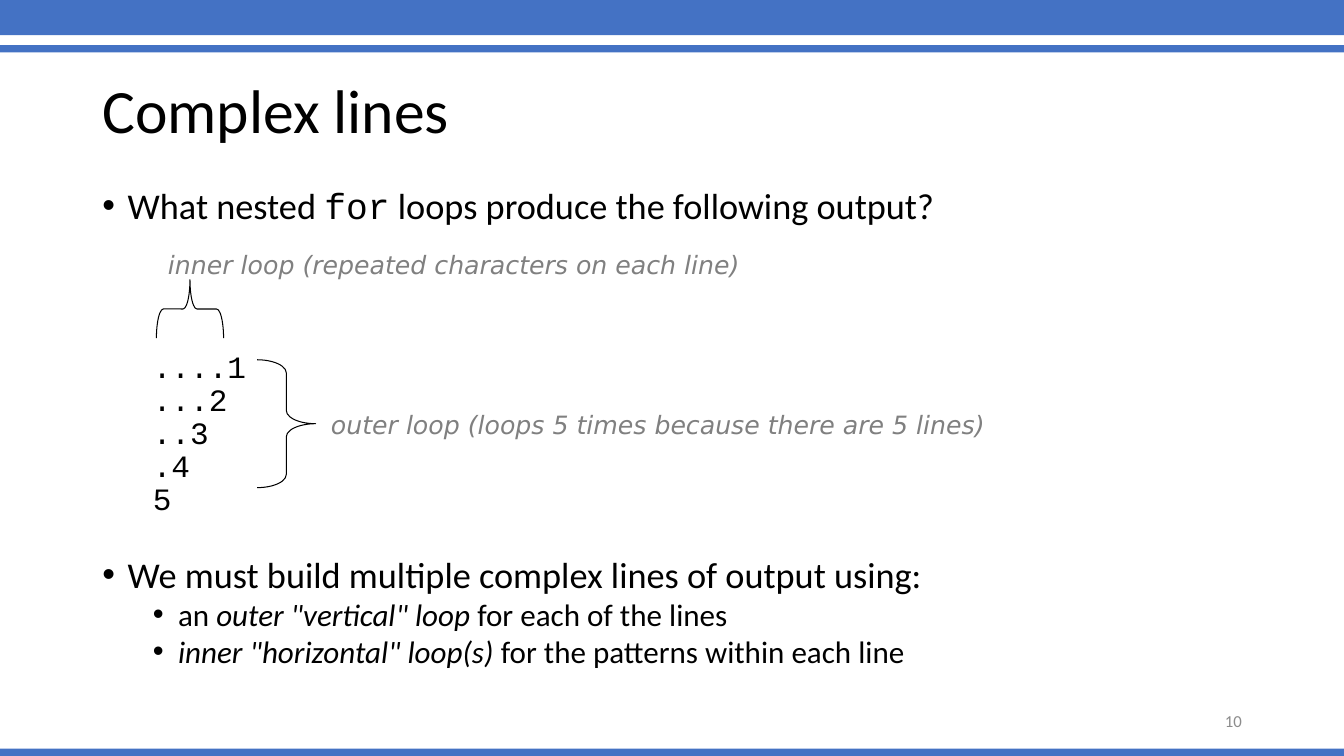
from lxml.etree import SubElement
from pptx import Presentation
from pptx.dml.color import RGBColor
from pptx.enum.shapes import MSO_SHAPE
from pptx.enum.text import MSO_ANCHOR, MSO_AUTO_SIZE, PP_ALIGN
from pptx.oxml.ns import qn
from pptx.util import Pt

SLIDE_WIDTH, SLIDE_HEIGHT = 960, 540
BLUE, BLACK, GRAY, PALE = "4472C4", "000000", "808080", "8C8C8C"
SANS, MONO, LABEL = "Calibri", "Courier New", "DejaVu Sans"

TITLE = "Complex lines"
QUESTION = [("What nested ", ""), ("for", "mono"), (" loops produce the following output?", "")]
OUTPUT = ["....1", "...2", "..3", ".4", "5"]
ANSWER = [("We must build multiple complex lines of output using:", "")]
LOOPS = [
    [("an ", ""), ('outer "vertical" loop', "italic"), (" for each of the lines", "")],
    [('inner "horizontal" loop(s)', "italic"), (" for the patterns within each line", "")],
]
BARS = [(0, 25.2), (32.2, 5.2), (534.8, 5.2)]
BRACES = [
    (183.6, 257, 41.8, 91.4, 0, 0.226),
    (114.8, 196.7, 41.8, 48, 270, 0.119),
]
LABELS = [
    ("inner loop (repeated characters on each line)", 120, 188.6, 430),
    ("outer loop (loops 5 times because there are 5 lines)", 236.4, 302.9, 490),
]
PAGE = "10"


def color(value):
    return RGBColor.from_string(value)


def place(part, left, top, width, height):
    part.left, part.top, part.width, part.height = map(Pt, (left, top, width, height))


def style(font, name, size, shade=BLACK, italic=None):
    font.name, font.size, font.italic = name, Pt(size), italic
    font.color.rgb = color(shade)


def add_line(frame, pieces, level, before, spacing, bullet=True, name=SANS):
    line = frame.paragraphs[0] if not frame.text else frame.add_paragraph()
    line.level, line.space_before, line.space_after = level, Pt(before), Pt(0)
    line.line_spacing = spacing
    style(line.font, name, 22.2 if level else 25.9)
    properties = line._p.get_or_add_pPr()
    properties.set("marL", str(Pt(54 if level else 18)))
    properties.set("indent", str(Pt(-18)))
    if bullet:
        SubElement(properties, qn("a:buFont")).set("typeface", "Arial")
        SubElement(properties, qn("a:buChar")).set("char", "•")
    else:
        SubElement(properties, qn("a:buNone"))
    defaults = properties.find(qn("a:defRPr"))
    properties.remove(defaults)
    properties.append(defaults)
    for text, kind in pieces:
        run = line.add_run()
        run.text = text
        style(run.font, MONO if kind == "mono" else name, 22.2 if level else 25.9)
        if kind == "italic":
            run.font.italic = True


def add_label(slide, text, left, middle, width, name, size, shade, italic, align):
    box = slide.shapes.add_textbox(Pt(left), Pt(middle - 14), Pt(width), Pt(28))
    frame = box.text_frame
    frame.word_wrap = True
    frame.vertical_anchor = MSO_ANCHOR.MIDDLE
    frame.margin_left = frame.margin_right = 0
    frame.text = text
    frame.paragraphs[0].alignment = align
    style(frame.paragraphs[0].font, name, size, shade, italic)


def main():
    deck = Presentation()
    deck.slide_width, deck.slide_height = Pt(SLIDE_WIDTH), Pt(SLIDE_HEIGHT)
    slide = deck.slides.add_slide(deck.slide_layouts[1])
    title, body = slide.placeholders

    for top, height in BARS:
        bar = slide.shapes.add_shape(MSO_SHAPE.RECTANGLE, 0, Pt(top), Pt(SLIDE_WIDTH), Pt(height))
        bar.shadow.inherit = False
        bar.fill.solid()
        bar.fill.fore_color.rgb = color(BLUE)
        bar.line.fill.background()

    place(title, 66, 28.8, 828, 104.4)
    title.text_frame.text = TITLE
    title.text_frame.auto_size = MSO_AUTO_SIZE.NONE
    title.text_frame.vertical_anchor = MSO_ANCHOR.MIDDLE
    heading = title.text_frame.paragraphs[0]
    heading.alignment, heading.line_spacing = PP_ALIGN.LEFT, 0.9
    style(heading.font, SANS, 44)

    place(body, 66, 133.2, 828, 353.5)
    frame = body.text_frame
    frame.auto_size = MSO_AUTO_SIZE.NONE
    frame.vertical_anchor = MSO_ANCHOR.TOP
    add_line(frame, QUESTION, 0, 0, 0.8)
    for index, text in enumerate(OUTPUT):
        add_line(frame, [(text, "")], 1, 5 if index else 94.7, Pt(18.5), False, MONO)
    add_line(frame, ANSWER, 0, 31.7, 0.8)
    for pieces in LOOPS:
        add_line(frame, pieces, 1, 5, 0.8)

    for left, top, width, height, rotation, curve in BRACES:
        brace = slide.shapes.add_shape(MSO_SHAPE.RIGHT_BRACE, Pt(left), Pt(top), Pt(width), Pt(height))
        brace.rotation = rotation
        brace.adjustments[0] = curve
        brace.shadow.inherit = False
        brace.fill.background()
        brace.line.color.rgb = color(BLACK)
        brace.line.width = Pt(0.75)

    for text, left, middle, width in LABELS:
        add_label(slide, text, left, middle, width, LABEL, 18, GRAY, True, PP_ALIGN.LEFT)
    add_label(slide, PAGE, 678, 515, 209, SANS, 12, PALE, None, PP_ALIGN.RIGHT)

    deck.save("out.pptx")


if __name__ == "__main__":
    main()
